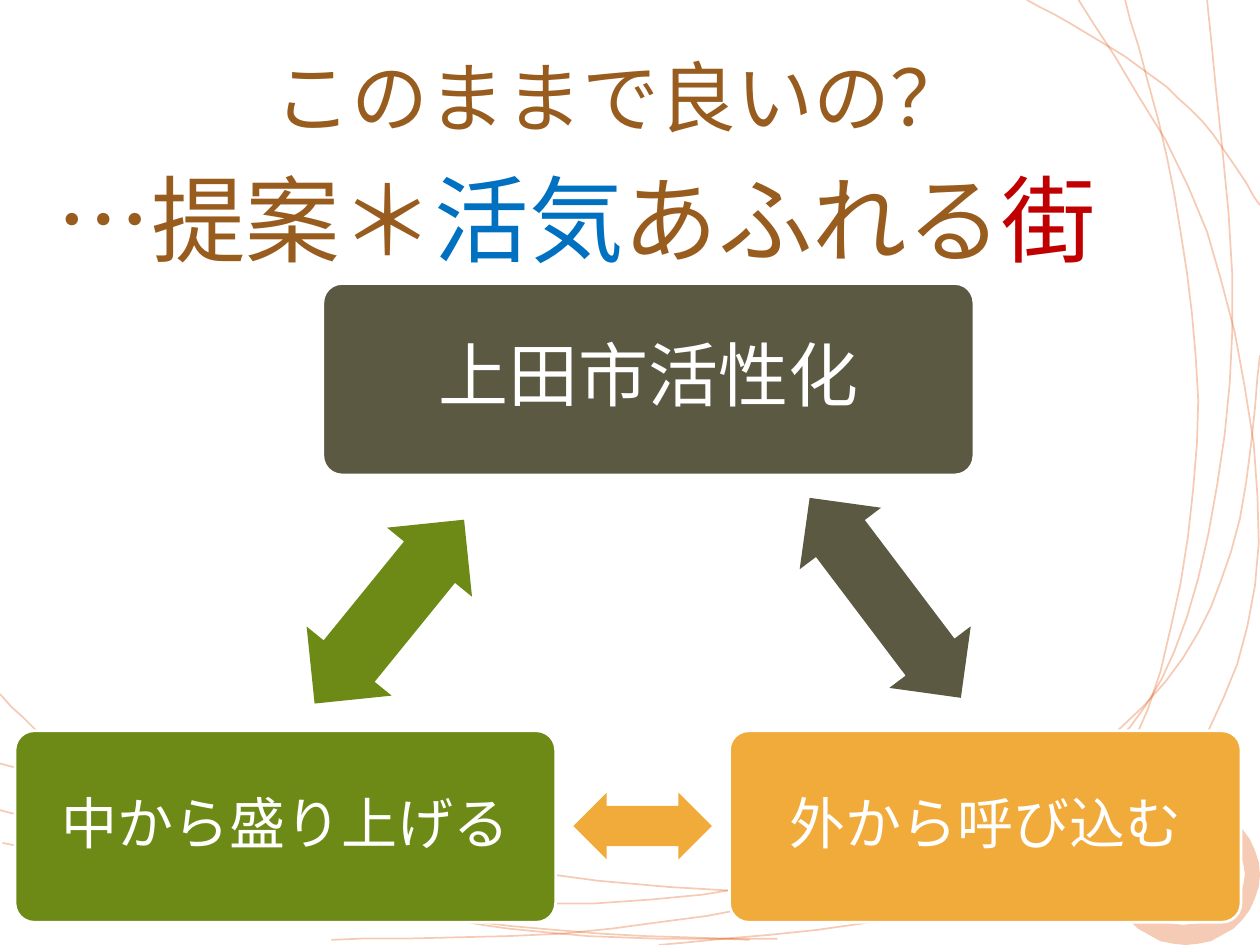
from math import cos, pi, sin

from lxml import etree
from pptx import Presentation
from pptx.dml.color import RGBColor
from pptx.enum.shapes import MSO_SHAPE
from pptx.enum.text import MSO_ANCHOR, MSO_AUTO_SIZE, PP_ALIGN
from pptx.oxml.ns import qn
from pptx.util import Pt

ROUND_RECT = MSO_SHAPE.ROUNDED_RECTANGLE
DOUBLE_ARROW = MSO_SHAPE.LEFT_RIGHT_ARROW
MIDDLE = MSO_ANCHOR.MIDDLE
TOP = MSO_ANCHOR.TOP
CENTER = PP_ALIGN.CENTER
LEFT = PP_ALIGN.LEFT
NO_FIT = MSO_AUTO_SIZE.NONE

FONT = "Calibri"
ORANGE, BROWN, WHITE = "E3560E", "975C1E", "FFFFFF"
OLIVE, AMBER, GREEN = "5C5943", "F1AB3B", "6D8A16"
BLUE, RED = "0070C0", "C00000"
GRID = Pt(0.72)
STEPS = 6

CURVES = [
    [(-3, 548), (55, 600), (185, 675), (338, 725), (467, 743), (617, 745)],
    [(523, 750), (714, 727), (828, 677), (911, 563), (950, 352), (932, 154), (893, 0)],
    [(0, 606), (248, 665), (582, 707), (825, 683), (945, 602), (999, 431), (958, 184), (856, 0)],
    [(2, 669), (237, 708), (516, 714), (749, 664), (908, 560), (977, 438), (1000, 282)],
    [(263, 746), (486, 737), (702, 694), (863, 610), (942, 490), (978, 263), (958, 0)],
    [(815, 0), (893, 45), (954, 96), (1000, 163)],
    [(0, 643), (211, 699), (405, 735), (595, 746)],
]


def smooth_points(knots):
    padded = [knots[0], *knots, knots[-1]]
    points = [knots[0]]
    for a, b, c, d in zip(padded, padded[1:], padded[2:], padded[3:]):
        for step in range(1, STEPS + 1):
            t = step / STEPS
            points.append(tuple(
                q + t * (r - p) / 2 + t**2 * (p - 2.5 * q + 2 * r - s / 2)
                + t**3 * (3 * (q - r) + s - p) / 2
                for p, q, r, s in zip(a, b, c, d)))
    return points


def ellipse_points(cx, cy, rx, ry):
    angles = [2 * pi * i / 36 for i in range(36)]
    return [(cx + rx * cos(a), cy + ry * sin(a)) for a in angles]


def paint(fill, color):
    fill.solid()
    fill.fore_color.rgb = RGBColor.from_string(color)


def set_alpha(sp, percent):
    for color in sp.element.spPr.iter(qn("a:srgbClr")):
        etree.SubElement(color, qn("a:alpha")).set("val", str(percent * 1000))


def add_freeform(s, contours, closed):
    builder = s.shapes.build_freeform(*contours[0][0], scale=GRID)
    for i, points in enumerate(contours):
        if i:
            builder.move_to(*points[0])
        builder.add_line_segments(points[1:], close=closed)
    sp = builder.convert_to_shape()
    sp.shadow.inherit = False
    return sp


def add_curve(s, knots):
    sp = add_freeform(s, [smooth_points(knots)], False)
    sp.fill.background()
    paint(sp.line.fill, ORANGE)
    sp.line.width = Pt(1)
    set_alpha(sp, 29)


def add_ring(s):
    outer = ellipse_points(941, 694, 59, 56)
    inner = ellipse_points(939, 694, 49, 40)
    sp = add_freeform(s, [outer, inner[::-1]], True)
    paint(sp.fill, ORANGE)
    sp.line.fill.background()
    set_alpha(sp, 30)


def add_preset(s, kind, box, color, adjustments):
    sp = s.shapes.add_shape(kind, *map(Pt, box))
    sp.shadow.inherit = False
    paint(sp.fill, color)
    for i, value in enumerate(adjustments):
        sp.adjustments[i] = value
    return sp


def add_run(p, text, size, color):
    r = p.add_run()
    r.text = text
    r.font.name = FONT
    r.font.size = Pt(size)
    paint(r.font.fill, color)


def add_box(s, box, color, text, size):
    sp = add_preset(s, ROUND_RECT, box, color, [0.1])
    paint(sp.line.fill, WHITE)
    sp.line.width = Pt(1.54)
    tf = sp.text_frame
    tf.word_wrap = True
    tf.vertical_anchor = MIDDLE
    p = tf.paragraphs[0]
    p.alignment = CENTER
    p.line_spacing = 0.9
    add_run(p, text, size, WHITE)


def add_arrow(s, box, color, rotation):
    sp = add_preset(s, DOUBLE_ARROW, box, color, [0.6, 0.5])
    sp.line.fill.background()
    sp.rotation = rotation


def fill_placeholder(sp, box, anchor, align, runs):
    sp.left, sp.top, sp.width, sp.height = map(Pt, box)
    tf = sp.text_frame
    tf.word_wrap = True
    tf.auto_size = NO_FIT
    tf.vertical_anchor = anchor
    p = tf.paragraphs[0]
    p.alignment = align
    for run in runs:
        add_run(p, *run)
    sp.element.getparent().append(sp.element)
    return p


def remove_bullet(p):
    pPr = p._p.get_or_add_pPr()
    pPr.set("marL", "0")
    pPr.set("indent", "0")
    etree.SubElement(pPr, qn("a:buNone"))


def main():
    prs = Presentation()
    prs.slide_width, prs.slide_height = Pt(720), Pt(540)
    s = prs.slides.add_slide(prs.slide_layouts[1])
    title, body = s.placeholders
    for knots in CURVES:
        add_curve(s, knots)
    add_ring(s)
    add_box(s, (184.5, 162, 372, 109.4), OLIVE, "上田市活性化", 40)
    add_arrow(s, (434.2, 312.5, 143.3, 58.3), OLIVE, 52.9)
    add_box(s, (416.9, 417.6, 292.3, 109.4), AMBER, "外から呼び込む", 32)
    add_arrow(s, (327.6, 452.9, 79.2, 38.2), AMBER, 180)
    add_box(s, (8.6, 417.6, 308.9, 109.4), GREEN, "中から盛り上げる", 32)
    add_arrow(s, (154.8, 318.2, 135.4, 62.6), GREEN, 309.1)
    fill_placeholder(title, (31, 9.4, 648, 90), MIDDLE, CENTER,
                     [("このままで良いの？", 44, BROWN)])
    p = fill_placeholder(body, (25.2, 88.6, 648, 369.4), TOP, LEFT,
                         [("…提案＊", 54, BROWN), ("活気", 54, BLUE),
                          ("あふれる", 54, BROWN), ("街", 54, RED)])
    remove_bullet(p)
    prs.save("out.pptx")


if __name__ == "__main__":
    main()
